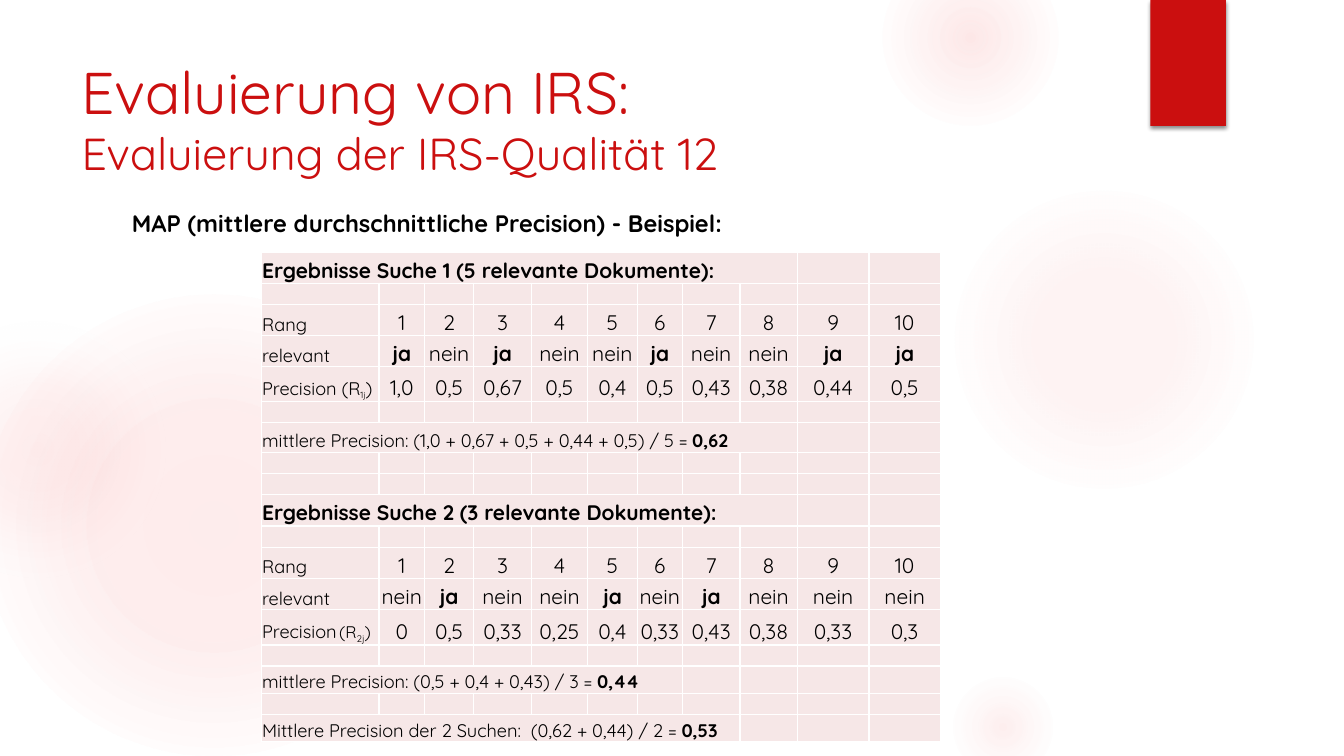
from pptx import Presentation
from pptx.dml.color import RGBColor
from pptx.enum import shapes, text
from pptx.oxml import parse_xml
from pptx.oxml.ns import nsdecls
from pptx.util import Pt

PX = 9144
FONT = "Quicksand"
RED = RGBColor(0xCB, 0x0F, 0x0F)
GLOW = RGBColor(0xF3, 0x5C, 0x5C)
PALE = RGBColor(0xF3, 0xF3, 0xF3)
ROSE = RGBColor(0xF6, 0xE7, 0xE7)
WHITE = RGBColor(0xFF, 0xFF, 0xFF)
BLACK = RGBColor(0, 0, 0)

BUBBLES = [
    (-17, 292, 458, [(0, GLOW, 11), (36, GLOW, 10), (75, GLOW, 0)]),
    (-92, 317, 258, [(0, GLOW, 8), (36, GLOW, 5), (71, PALE, 0)]),
    (941, 183, 308, [(0, GLOW, 7), (36, GLOW, 6), (69, GLOW, 0)]),
    (875, -50, 175, [(0, GLOW, 14), (36, GLOW, 7), (73, GLOW, 0)]),
    (941, 667, 108, [(0, GLOW, 10), (31, GLOW, 5), (66, GLOW, 0)]),
]
COLS = [117, 45, 49, 57, 56, 49, 45, 57, 57, 71, 71]
ROWS = [31, 21, 31, 31, 34, 21, 30, 21, 21, 31, 21, 31, 31, 35, 21, 27, 21, 27]
RANKS = [str(n) for n in range(1, 11)]
SEARCHES = [
    (0, "Ergebnisse Suche 1 (5 relevante Dokumente):",
     "ja nein ja nein nein ja nein nein ja ja",
     [("Precision (R", 13), ("1j", 11, False, -25), (")", 13)],
     "1,0 0,5 0,67 0,5 0,4 0,5 0,43 0,38 0,44 0,5"),
    (9, "Ergebnisse Suche 2 (3 relevante Dokumente):",
     "nein ja nein nein ja nein ja nein nein nein",
     [("Precision", 13), (" ", 7), ("(R", 12), ("2j", 12, False, -25), (")", 12)],
     "0 0,5 0,33 0,25 0,4 0,33 0,43 0,38 0,33 0,3"),
]
MEANS = [
    (6, 9, "mittlere Precision: (1,0 + 0,67 + 0,5 + 0,44 + 0,5) / 5 = ", "0,62"),
    (15, 7, "mittlere Precision: (0,5 + 0,4 + 0,43) / 3 = ", "0,44"),
    (17, 8, "Mittlere Precision der 2 Suchen:  (0,62 + 0,44) / 2 = ", "0,53"),
]


def px(*values):
    return [v * PX for v in values]


def add_run(p, content, size, bold=False, base=0, color=BLACK):
    r = p.add_run()
    r.text = content
    r.font.name = FONT
    r.font.size = Pt(size)
    r.font.bold = bold
    r.font.color.rgb = color
    if base:
        r.font._element.set("baseline", str(base * 1000))


def add_plain_shape(s, kind, box):
    sp = s.shapes.add_shape(kind, *px(*box))
    sp.shadow.inherit = False
    sp.line.fill.background()
    return sp


def add_bubble(s, x, y, size, stops):
    sp = add_plain_shape(s, shapes.MSO_SHAPE.OVAL, (x, y, size, size))
    gs = "".join(
        f'<a:gs pos="{pos * 1000}"><a:srgbClr val="{color}">'
        f'<a:alpha val="{alpha * 1000}"/></a:srgbClr></a:gs>'
        for pos, color, alpha in stops)
    grad = parse_xml(
        f'<a:gradFill {nsdecls("a")}><a:gsLst>{gs}</a:gsLst><a:path path="circle">'
        '<a:fillToRect l="50000" t="50000" r="50000" b="50000"/></a:path></a:gradFill>')
    sp._element.spPr.find(".//{*}prstGeom").addnext(grad)


def add_ribbon(s):
    sp = add_plain_shape(s, shapes.MSO_SHAPE.RECTANGLE, (1141, 0, 75, 125))
    sp.fill.solid()
    sp.fill.fore_color.rgb = RED
    sp._element.spPr.find("{*}effectLst").append(parse_xml(
        f'<a:outerShdw {nsdecls("a")} blurRad="{Pt(3)}" dist="{Pt(2)}" dir="5400000" '
        f'rotWithShape="0"><a:srgbClr val="{BLACK}"><a:alpha val="45000"/>'
        '</a:srgbClr></a:outerShdw>'))


def set_title(s):
    title = s.shapes.title
    title.left, title.top, title.width, title.height = px(71, 50, 1029, 153)
    s.shapes._spTree.append(title._element)
    tf = title.text_frame
    tf.vertical_anchor = text.MSO_ANCHOR.TOP
    tf.auto_size = text.MSO_AUTO_SIZE.NONE
    p = tf.paragraphs[0]
    p.alignment = text.PP_ALIGN.LEFT
    add_run(p, "Evaluierung von IRS: ", 42, color=RED)
    p.add_line_break()
    add_run(p, "Evaluierung der IRS-Qualität 12", 32, color=RED)


def add_heading(s):
    tf = s.shapes.add_textbox(*px(121, 202, 978, 42)).text_frame
    tf.word_wrap = True
    p = tf.paragraphs[0]
    p.space_after = Pt(6)
    add_run(p, "MAP (mittlere durchschnittliche Precision) - Beispiel:", 17, True)


def format_cell(cell):
    tcPr = cell._tc.get_or_add_tcPr()
    for side in "LRTB":
        tcPr.append(parse_xml(
            f'<a:ln{side} {nsdecls("a")} w="{Pt(1)}"><a:solidFill>'
            f'<a:srgbClr val="{WHITE}"/></a:solidFill></a:ln{side}>'))
    cell.fill.solid()
    cell.fill.fore_color.rgb = ROSE
    cell.margin_left, cell.margin_right, cell.margin_top = px(1, 1, 1)
    cell.margin_bottom = 0
    cell.vertical_anchor = text.MSO_ANCHOR.BOTTOM
    cell.text_frame.paragraphs[0]._p.get_or_add_endParaRPr().set("sz", "800")


def write_cell(cell, runs, align=text.PP_ALIGN.LEFT):
    p = cell.text_frame.paragraphs[0]
    p.alignment = align
    for run in runs:
        add_run(p, *run)


def write_span(table, row, width, runs):
    table.cell(row, 0).merge(table.cell(row, width - 1))
    write_cell(table.cell(row, 0), runs)


def write_row(table, row, label, values):
    write_cell(table.cell(row, 0), label)
    for col, value in enumerate(values, 1):
        write_cell(table.cell(row, col), [(value, 15, value == "ja")],
                   text.PP_ALIGN.CENTER)


def add_results(s):
    frame = s.shapes.add_table(len(ROWS), len(COLS),
                               *px(259, 250, sum(COLS), sum(ROWS)))
    table = frame.table
    table.first_row = table.horz_banding = False
    for column, width in zip(table.columns, COLS):
        column.width = width * PX
    for row, height in zip(table.rows, ROWS):
        row.height = height * PX
    for cell in table.iter_cells():
        format_cell(cell)
    for top, heading, relevant, label, precision in SEARCHES:
        write_span(table, top, 9, [(heading, 15, True)])
        write_row(table, top + 2, [("Rang", 13)], RANKS)
        write_row(table, top + 3, [("relevant", 13)], relevant.split())
        write_row(table, top + 4, label, precision.split())
    for row, width, formula, mean in MEANS:
        write_span(table, row, width, [(formula, 13), (mean, 13, True)])


def main():
    prs = Presentation()
    prs.slide_width, prs.slide_height = px(1333, 750)
    s = prs.slides.add_slide(prs.slide_layouts[5])
    for bubble in BUBBLES:
        add_bubble(s, *bubble)
    add_ribbon(s)
    set_title(s)
    add_heading(s)
    add_results(s)
    prs.save("out.pptx")


if __name__ == "__main__":
    main()
